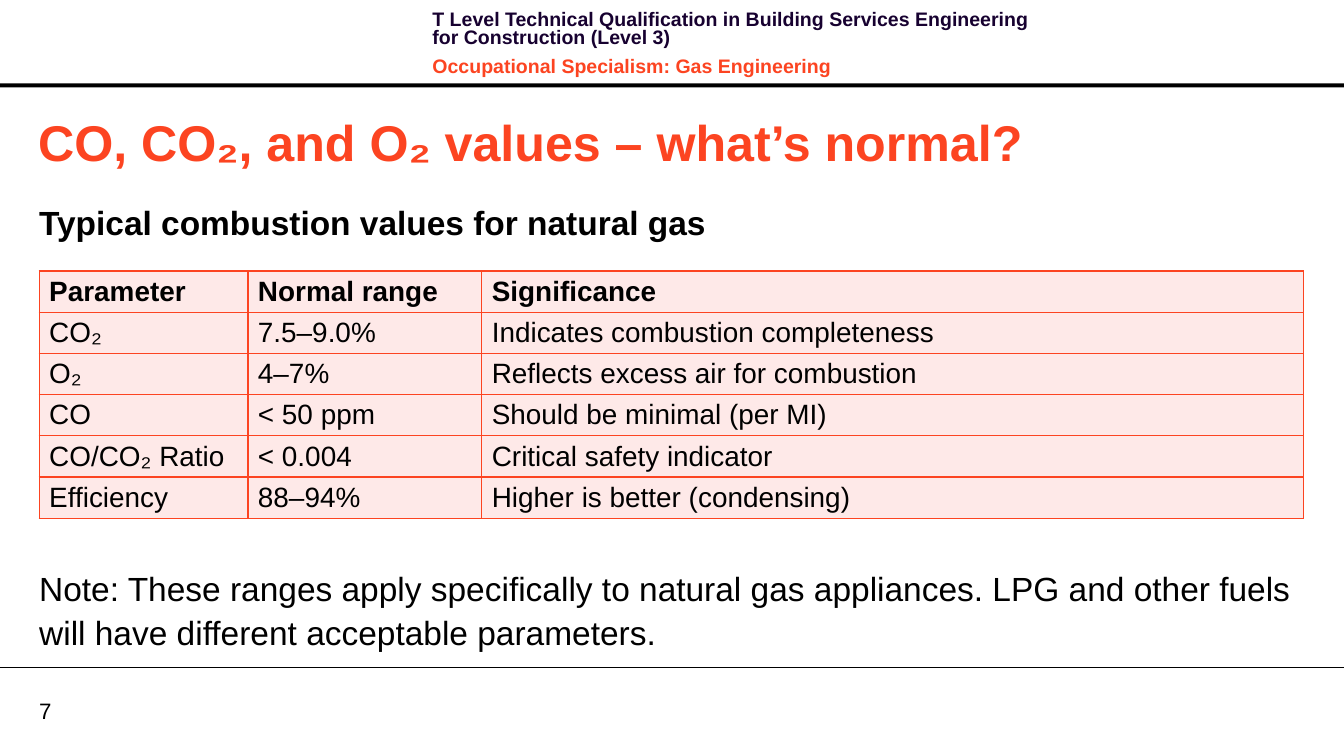
from dataclasses import dataclass

from lxml import etree
from pptx import Presentation
from pptx import util as u
from pptx.dml.color import RGBColor
from pptx.enum import shapes, text
from pptx.oxml import ns

COLORS = {"black": "000000", "navy": "170130", "orange": "FC4421", "pink": "FEE9E8"}
FONT = "Arial"
SLIDE_WIDTH, SLIDE_HEIGHT = 13.39, 7.48
MARGIN = 0.39


@dataclass
class Line:
    content: str
    size: float
    color: str = "black"
    bold: bool = False
    line_spacing: float | u.Pt | None = None
    space_before: float = 0
    space_after: float = 0


@dataclass
class TextBlock:
    left: float
    top: float
    width: float
    height: float
    lines: list[Line]
    inset_x: float = 0
    inset_y: float = 0
    anchor: text.MSO_ANCHOR = text.MSO_ANCHOR.TOP


def rgb(name: str) -> RGBColor:
    return RGBColor.from_string(COLORS[name])


def write_lines(frame, lines: list[Line]) -> None:
    for index, line in enumerate(lines):
        paragraph = frame.add_paragraph() if index else frame.paragraphs[0]
        paragraph.alignment = text.PP_ALIGN.LEFT
        paragraph.line_spacing = line.line_spacing
        paragraph.space_before = u.Pt(line.space_before)
        paragraph.space_after = u.Pt(line.space_after)
        run = paragraph.add_run()
        run.text = line.content
        run.font.name = FONT
        run.font.size = u.Pt(line.size)
        run.font.bold = line.bold
        run.font.color.rgb = rgb(line.color)


def fill_block(shape, block: TextBlock) -> None:
    shape.left, shape.top = u.Inches(block.left), u.Inches(block.top)
    shape.width, shape.height = u.Inches(block.width), u.Inches(block.height)
    frame = shape.text_frame
    frame.word_wrap = True
    frame.auto_size = text.MSO_AUTO_SIZE.NONE
    frame.vertical_anchor = block.anchor
    frame.margin_left = frame.margin_right = u.Inches(block.inset_x)
    frame.margin_top = frame.margin_bottom = u.Inches(block.inset_y)
    write_lines(frame, block.lines)


def add_cell_borders(cell, color: str, points: float) -> None:
    properties = cell._tc.get_or_add_tcPr()
    for side in ("a:lnL", "a:lnR", "a:lnT", "a:lnB"):
        border = etree.SubElement(properties, ns.qn(side), w=str(u.Pt(points)))
        solid = etree.SubElement(border, ns.qn("a:solidFill"))
        etree.SubElement(solid, ns.qn("a:srgbClr"), val=COLORS[color])


def add_values_table(slide, rows: list[tuple[str, ...]], widths: list[float]) -> None:
    row_height = 0.41
    table = slide.shapes.add_table(
        len(rows), len(widths), u.Inches(MARGIN), u.Inches(2.7),
        u.Inches(sum(widths)), u.Inches(row_height * len(rows))).table
    for column, width in zip(table.columns, widths):
        column.width = u.Inches(width)
    for row_index, row in enumerate(rows):
        table.rows[row_index].height = u.Inches(row_height)
        for column_index, content in enumerate(row):
            cell = table.cell(row_index, column_index)
            add_cell_borders(cell, "orange", 1)
            cell.fill.solid()
            cell.fill.fore_color.rgb = rgb("pink")
            cell.vertical_anchor = text.MSO_ANCHOR.MIDDLE
            write_lines(cell.text_frame, [Line(content, 20, bold=row_index == 0)])


def add_rules(slide) -> None:
    bar = slide.shapes.add_shape(
        shapes.MSO_SHAPE.RECTANGLE, 0, u.Inches(0.83), u.Inches(SLIDE_WIDTH), u.Inches(0.04))
    bar.shadow.inherit = False
    bar.fill.solid()
    bar.fill.fore_color.rgb = rgb("black")
    bar.line.fill.background()

    footer_y = u.Inches(6.65)
    rule = slide.shapes.add_connector(
        shapes.MSO_CONNECTOR.STRAIGHT, 0, footer_y, u.Inches(SLIDE_WIDTH), footer_y)
    rule.line.color.rgb = rgb("black")
    rule.line.width = u.Pt(0.75)
    etree.SubElement(rule._element.spPr, ns.qn("a:effectLst"))


HEADER_SPACING = u.Pt(13.1)
HEADER = TextBlock(4.21, 0.07, 6.37, 0.64, [
    Line("T Level Technical Qualification in Building Services Engineering "
         "for Construction (Level 3)", 14, "navy", True, HEADER_SPACING, 0, 4),
    Line("Occupational Specialism: Gas Engineering", 14, "orange", True, HEADER_SPACING, 4, 4),
], 0.1, 0.05)
TITLE = TextBlock(0.28, 1.05, 12.72, 0.71, [
    Line("CO, CO₂, and O₂ values – what’s normal?", 36, "orange", True),
], 0.1, 0.05, text.MSO_ANCHOR.MIDDLE)
SUBHEADING = TextBlock(MARGIN, 1.97, 12.72, 0.5, [
    Line("Typical combustion values for natural gas", 24, bold=True, line_spacing=1.1)])
NOTE = TextBlock(MARGIN, 5.62, 12.72, 0.88, [
    Line("Note: These ranges apply specifically to natural gas appliances. LPG and other "
         "fuels will have different acceptable parameters.", 24, line_spacing=1.1)])
PAGE_NUMBER = TextBlock(MARGIN, 6.94, 0.64, 0.27, [Line("7", 16)],
                        anchor=text.MSO_ANCHOR.MIDDLE)

COMBUSTION_VALUES = [
    ("Parameter", "Normal range", "Significance"),
    ("CO₂", "7.5–9.0%", "Indicates combustion completeness"),
    ("O₂", "4–7%", "Reflects excess air for combustion"),
    ("CO", "< 50 ppm", "Should be minimal (per MI)"),
    ("CO/CO₂ Ratio", "< 0.004", "Critical safety indicator"),
    ("Efficiency", "88–94%", "Higher is better (condensing)"),
]


def main() -> None:
    presentation = Presentation()
    presentation.slide_width = u.Inches(SLIDE_WIDTH)
    presentation.slide_height = u.Inches(SLIDE_HEIGHT)
    slide = presentation.slides.add_slide(presentation.slide_layouts.get_by_name("Title Only"))

    # Header bar and footer rule
    add_rules(slide)

    # Title and other text
    fill_block(slide.shapes.title, TITLE)
    for block in (HEADER, SUBHEADING, NOTE, PAGE_NUMBER):
        fill_block(slide.shapes.add_textbox(0, 0, 0, 0), block)

    # Combustion values
    add_values_table(slide, COMBUSTION_VALUES, [2.08, 2.33, 8.19])

    presentation.save("out.pptx")


if __name__ == "__main__":
    main()
